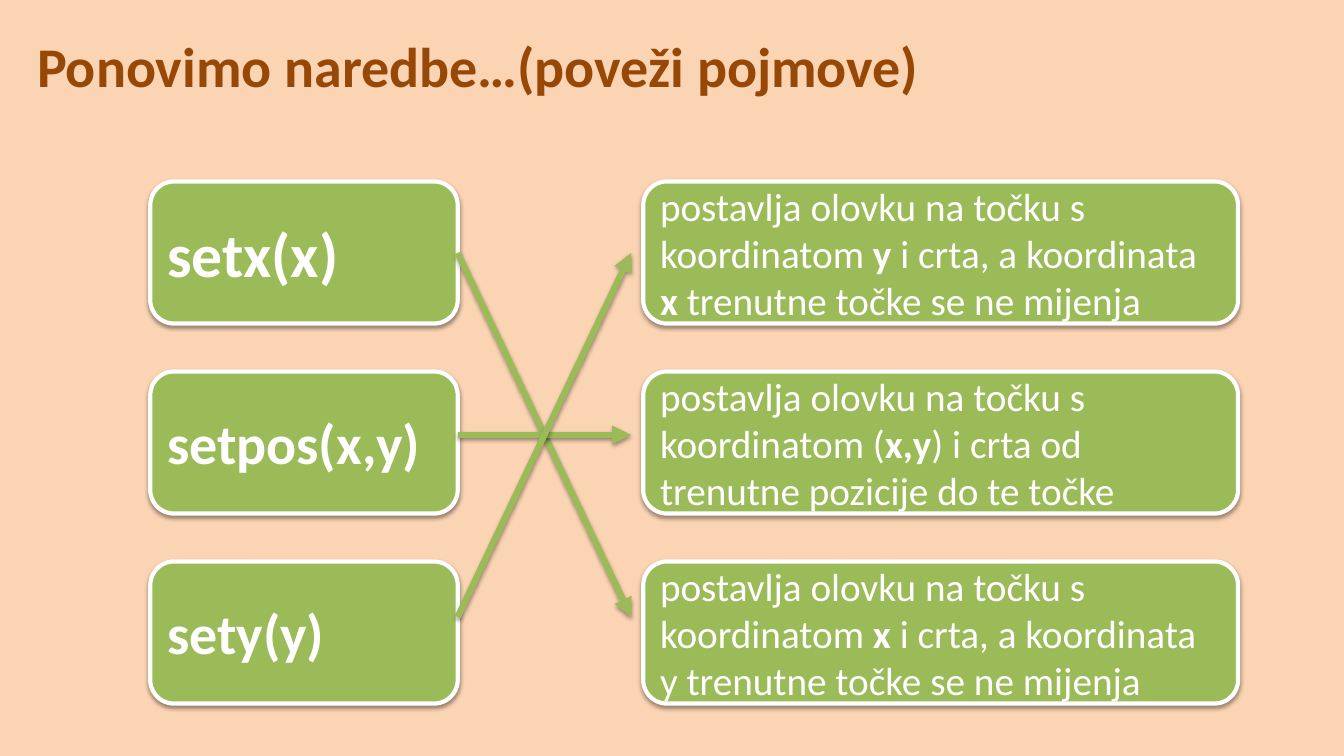
from lxml import etree
from pptx import Presentation
from pptx import util as u
from pptx.dml.color import RGBColor
from pptx.enum import shapes, text
from pptx.oxml import ns

COL = {"back": "FBD4B4", "title": "974806", "green": "9BBB59",
       "white": "FFFFFF", "shade": "000000"}
FONT = "Calibri"

# Commands with their text size; asterisks enclose bold words in the meanings
TERMS = [("setx(x)", 44), ("setpos(x,y)", 40), ("sety(y)", 40)]
MEANS = [
    "postavlja olovku na točku s koordinatom *y* i crta, a koordinata *x* trenutne točke se ne mijenja",
    "postavlja olovku na točku s koordinatom (*x,y*) i crta od trenutne pozicije do te točke",
    "postavlja olovku na točku s koordinatom *x* i crta, a koordinata y trenutne točke se ne mijenja",
]
LINKS = [(0, 2), (1, 1), (2, 0)]
TALL, STEP = 1.41, 1.885


def rgb(name):
    return RGBColor.from_string(COL[name])


def node(owner, tag, **attrs):
    return etree.SubElement(owner, ns.qn(tag), **attrs)


def write(shape, words, size=28, color="white", bold=False, anchor="MIDDLE"):
    frame = shape.text_frame
    frame.word_wrap = True
    frame.vertical_anchor = text.MSO_ANCHOR[anchor]
    par = frame.paragraphs[0]
    par.alignment = text.PP_ALIGN.LEFT
    for i, part in enumerate(words.split("*")):
        run = par.add_run()
        run.text = part
        run.font.name = FONT
        run.font.size = u.Pt(size)
        run.font.bold = bold or i % 2 == 1
        run.font.color.rgb = rgb(color)


def shade(shape):
    """Soft shadow straight below; call after fill and line are set."""
    fx = node(shape._element.spPr, "a:effectLst")
    drop = node(fx, "a:outerShdw", blurRad=str(u.Pt(3.1)), dist=str(u.Pt(1.6)),
                dir="5400000", rotWithShape="0")
    tint = node(drop, "a:srgbClr", val=COL["shade"])
    node(tint, "a:alpha", val="38000")


def title(slide, x, y, w, h):
    box = slide.shapes.add_textbox(*map(u.Inches, (x, y, w, h)))
    write(box, "Ponovimo naredbe…(poveži pojmove)", size=40, color="title",
          bold=True, anchor="TOP")


def card(slide, x, y, w, h, words, **form):
    box = slide.shapes.add_shape(shapes.MSO_SHAPE.ROUNDED_RECTANGLE,
                                 *map(u.Inches, (x, y, w, h)))
    box.fill.solid()
    box.fill.fore_color.rgb = rgb("green")
    box.line.color.rgb = rgb("white")
    box.line.width = u.Pt(3)
    shade(box)
    write(box, words, **form)


def arrow(slide, x1, y1, x2, y2):
    line = slide.shapes.add_connector(shapes.MSO_CONNECTOR.STRAIGHT,
                                      *map(u.Inches, (x1, y1, x2, y2)))
    line.line.color.rgb = rgb("green")
    line.line.width = u.Pt(4.5)
    node(line.line._get_or_add_ln(), "a:tailEnd", type="triangle")
    shade(line)


def match(slide, x, y, w):
    """Commands on the left, meanings on the right, arrows between."""
    left, right = 3.05, 5.9
    for i, (term, size) in enumerate(TERMS):
        card(slide, x, y + i * STEP, left, TALL, term, size=size, bold=True)
    for i, mean in enumerate(MEANS):
        card(slide, x + w - right, y + i * STEP, right, TALL, mean)
    # Arrows stop just short of the right column
    top, gap = y + 0.71, 1.805
    for a, b in LINKS:
        arrow(slide, x + left, top + a * gap, x + w - right - 0.12, top + b * gap)


def main():
    deck = Presentation()
    deck.slide_width, deck.slide_height = u.Inches(13.33), u.Inches(7.5)
    slide = deck.slides.add_slide(deck.slide_layouts[6])
    slide.background.fill.solid()
    slide.background.fill.fore_color.rgb = rgb("back")
    title(slide, 0.27, 0.26, 12, 1.01)
    match(slide, 1.49, 1.8, 10.79)
    deck.save("out.pptx")


if __name__ == "__main__":
    main()
